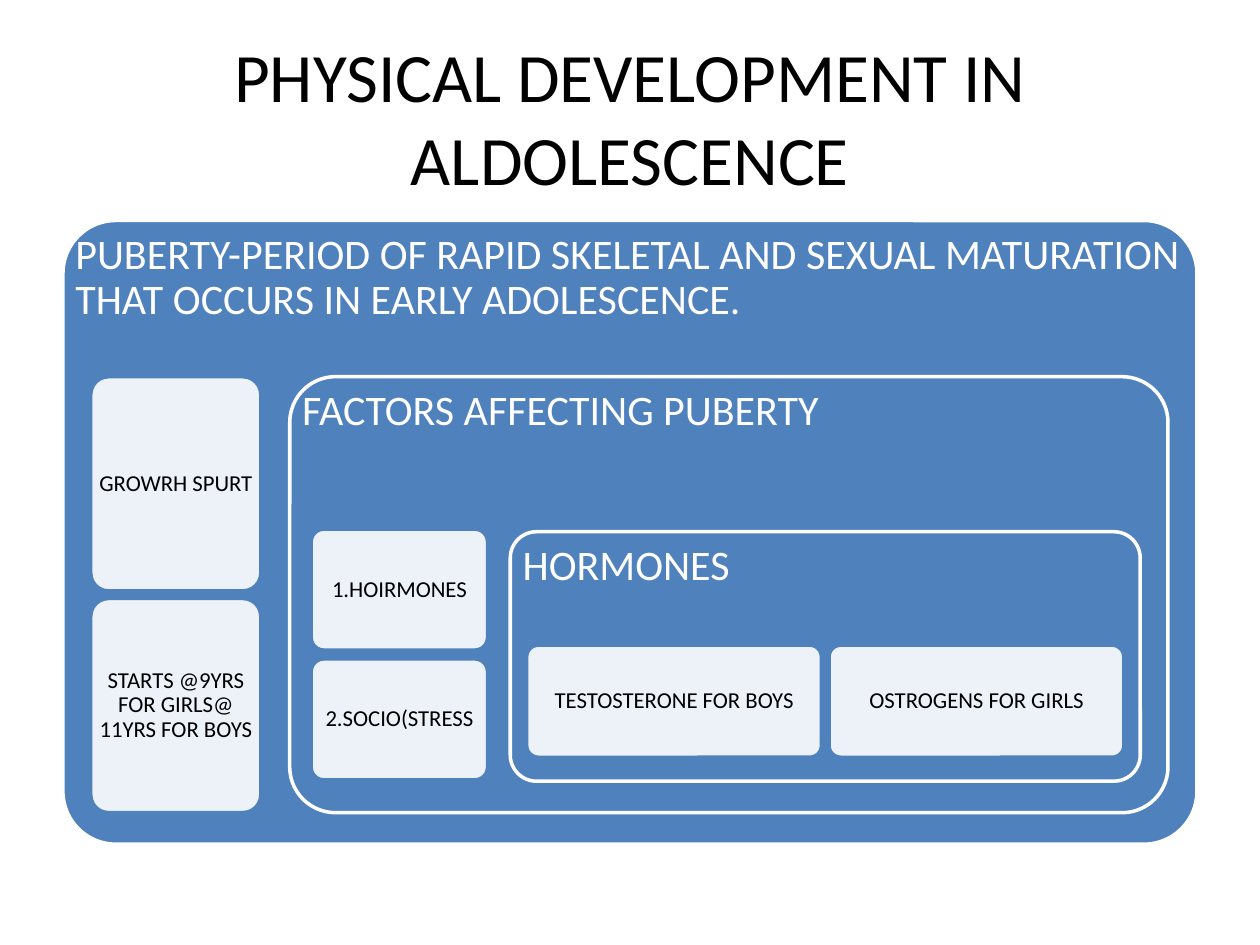
"""Build a slide of nested panels on physical development in adolescence."""
from dataclasses import dataclass

from lxml import etree
from pptx import Presentation
from pptx import util as u
from pptx.dml.color import RGBColor
from pptx.enum import shapes, text
from pptx.oxml.ns import qn

COLUMNS, ROWS = 100, 75
CELL = u.Inches(0.1)
FONT = "Calibri"
COLOURS = {"panel": "4F81BD", "light": "FFFFFF", "dark": "000000"}


@dataclass(frozen=True)
class Area:
    column: float
    row: float
    width: float
    height: float

    def lengths(self) -> list[int]:
        return [round(n * CELL) for n in (self.column, self.row, self.width, self.height)]


@dataclass(frozen=True)
class Panel:
    heading: str
    area: Area
    rounding: float = 0.105


@dataclass(frozen=True)
class CardSeries:
    labels: tuple[str, ...]
    first: Area
    column_step: float = 0
    row_step: float = 0


PANELS = (
    Panel("PUBERTY-PERIOD OF RAPID SKELETAL AND SEXUAL MATURATION "
          "THAT OCCURS IN EARLY ADOLESCENCE.", Area(5, 17.5, 90, 49.5), 0.085),
    Panel("FACTORS AFFECTING PUBERTY", Area(23, 29.9, 69.7, 34.6)),
    Panel("HORMONES", Area(40.5, 42.2, 50, 19.8)),
)
CARDS = (
    CardSeries(("GROWRH SPURT", "STARTS @9YRS FOR GIRLS@ 11YRS FOR BOYS"),
               Area(7.2, 29.9, 13.5, 17), row_step=17.6),
    CardSeries(("1.HOIRMONES", "2.SOCIO(STRESS"),
               Area(24.7, 42, 14, 9.6), row_step=10.3),
    CardSeries(("TESTOSTERONE FOR BOYS", "OSTROGENS FOR GIRLS"),
               Area(41.8, 51.2, 23.4, 8.9), column_step=24),
)


def colour(name: str) -> RGBColor:
    return RGBColor.from_string(COLOURS[name])


def write(box, words: str, size: float, ink: str, align, anchor, inset: float, spacing: float) -> None:
    frame = box.text_frame
    frame.text = words
    frame.word_wrap = True
    frame.auto_size = text.MSO_AUTO_SIZE.NONE
    frame.vertical_anchor = anchor
    frame.margin_left = frame.margin_right = u.Inches(inset)
    frame.margin_top = frame.margin_bottom = u.Inches(inset)
    para = frame.paragraphs[0]
    para.alignment = align
    para.line_spacing = spacing
    for span in para.runs:
        span.font.name = FONT
        span.font.size = u.Pt(size)
        span.font.color.rgb = colour(ink)


def add_rounded(page, area: Area, rounding: float, fill: str, line: str):
    box = page.shapes.add_shape(shapes.MSO_SHAPE.ROUNDED_RECTANGLE, *area.lengths())
    box.adjustments[0] = rounding
    box.shadow.inherit = False
    box.fill.solid()
    box.fill.fore_color.rgb = colour(fill)
    box.line.color.rgb = colour(line)
    box.line.width = u.Pt(2)
    return box


def add_panel(page, panel: Panel) -> None:
    add_rounded(page, panel.area, panel.rounding, "panel", "light")
    heading = page.shapes.add_textbox(*panel.area.lengths())
    write(heading, panel.heading, 24, "light", text.PP_ALIGN.LEFT, text.MSO_ANCHOR.TOP, 0.1, 0.9)


def add_cards(page, series: CardSeries) -> None:
    first = series.first
    for i, label in enumerate(series.labels):
        area = Area(first.column + i * series.column_step, first.row + i * series.row_step,
                    first.width, first.height)
        card = add_rounded(page, area, 0.105, "light", "panel")
        solid = card.fill._xPr.find(qn("a:solidFill"))
        etree.SubElement(solid[0], qn("a:alpha"), val="90000")
        write(card, label, 13, "dark", text.PP_ALIGN.CENTER, text.MSO_ANCHOR.MIDDLE, 0.01, 0.9)


def main() -> None:
    deck = Presentation()
    deck.slide_width, deck.slide_height = COLUMNS * CELL, ROWS * CELL
    page = deck.slides.add_slide(deck.slide_layouts[5])
    title = page.shapes.title
    title.left, title.top, title.width, title.height = Area(5, 3, 90, 12.5).lengths()
    write(title, "PHYSICAL DEVELOPMENT IN ALDOLESCENCE", 39.6, "dark",
          text.PP_ALIGN.CENTER, text.MSO_ANCHOR.MIDDLE, 0.1, 1.0)
    for panel in PANELS:
        add_panel(page, panel)
    for series in CARDS:
        add_cards(page, series)
    deck.save("out.pptx")


if __name__ == "__main__":
    main()
